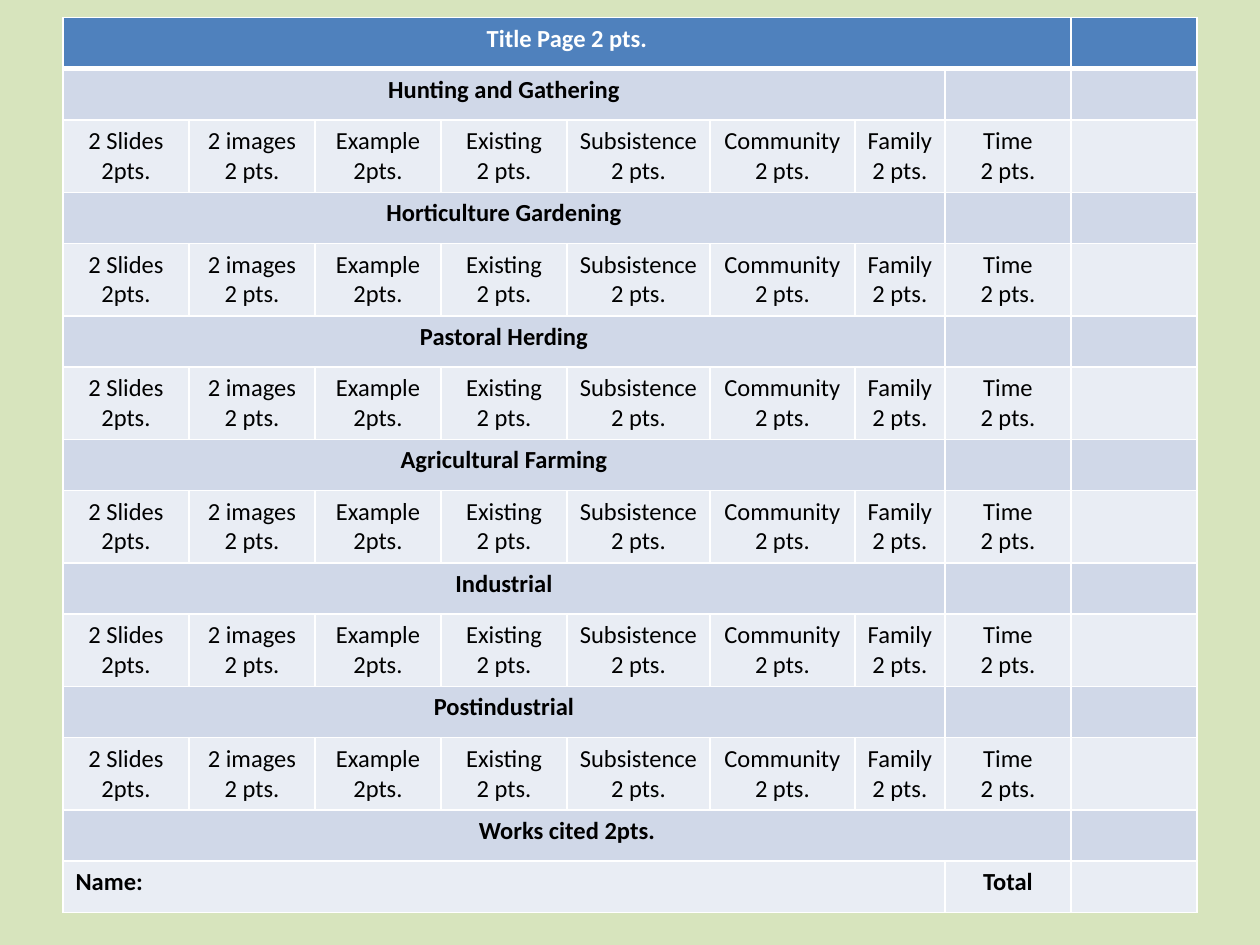
from lxml.etree import SubElement
from pptx import Presentation
from pptx.dml.color import RGBColor
from pptx.enum.text import PP_ALIGN
from pptx.oxml.ns import qn
from pptx.util import Pt

# Content: each row is a list of (text, columns spanned, bold)
STAGES = ["Hunting and Gathering", "Horticulture Gardening", "Pastoral Herding",
          "Agricultural Farming", "Industrial", "Postindustrial"]
CRITERIA = ["2 Slides\n2pts.", "2 images\n2 pts.", "Example\n2pts.",
            "Existing\n2 pts.", "Subsistence\n2 pts.", "Community\n2 pts.",
            "Family\n2 pts.", "Time\n2 pts."]

rows = [[("Title Page 2 pts.", 8, True)]]
for stage in STAGES:
    rows.append([(stage, 7, True)])
    rows.append([(text, 1, False) for text in CRITERIA])
rows.append([("Works cited 2pts.", 8, True)])
rows.append([("Name:", 7, True), ("Total", 1, True)])

# Layout and colours
LEFT, TOP = 36, 10
COL_WIDTHS = [72, 72, 72, 72, 81.7, 82.8, 51.5, 72, 72]
SINGLE_ROW, DOUBLE_ROW = 29.3, 41.3
BACKGROUND, HEADER, DARK_BAND, LIGHT_BAND = "D7E4BD", "4F81BD", "D0D8E8", "E9EDF4"
WHITE, BLACK = "FFFFFF", "000000"


def set_color(fill, color):
    fill.solid()
    fill.fore_color.rgb = RGBColor.from_string(color)


def set_borders(cell, top, bottom):
    tcPr = cell._tc.get_or_add_tcPr()
    for side, width in (("L", 1), ("R", 1), ("T", top), ("B", bottom)):
        ln = SubElement(tcPr, qn(f"a:ln{side}"), w=str(Pt(width)))
        SubElement(SubElement(ln, qn("a:solidFill")), qn("a:srgbClr"), val=WHITE)


def write(cell, text, bold, color):
    cell.text = text
    for p in cell.text_frame.paragraphs:
        p.alignment = PP_ALIGN.LEFT if text == "Name:" else PP_ALIGN.CENTER
        p.font.name = "Calibri"
        p.font.size = Pt(14)
        p.font.bold = bold
        set_color(p.font.fill, color)


prs = Presentation()
prs.slide_width, prs.slide_height = Pt(720), Pt(540)
s = prs.slides.add_slide(prs.slide_layouts[6])
set_color(s.background.fill, BACKGROUND)

# Grid
heights = [DOUBLE_ROW if "\n" in row[0][0] else SINGLE_ROW for row in rows]
table = s.shapes.add_table(len(rows), len(COL_WIDTHS), Pt(LEFT), Pt(TOP),
                           Pt(sum(COL_WIDTHS)), Pt(sum(heights))).table
for column, width in zip(table.columns, COL_WIDTHS):
    column.width = Pt(width)
for table_row, height in zip(table.rows, heights):
    table_row.height = Pt(height)

# Cells: banded fills and white rules, heavier under the header
for i, row in enumerate(rows):
    band = HEADER if i == 0 else DARK_BAND if i % 2 else LIGHT_BAND
    for cell in table.rows[i].cells:
        set_borders(cell, top=3 if i == 1 else 1, bottom=3 if i == 0 else 1)
        set_color(cell.fill, band)
    col = 0
    for text, span, bold in row:
        cell = table.cell(i, col)
        if span > 1:
            cell.merge(table.cell(i, col + span - 1))
        write(cell, text, bold, WHITE if i == 0 else BLACK)
        col += span

prs.save("out.pptx")
